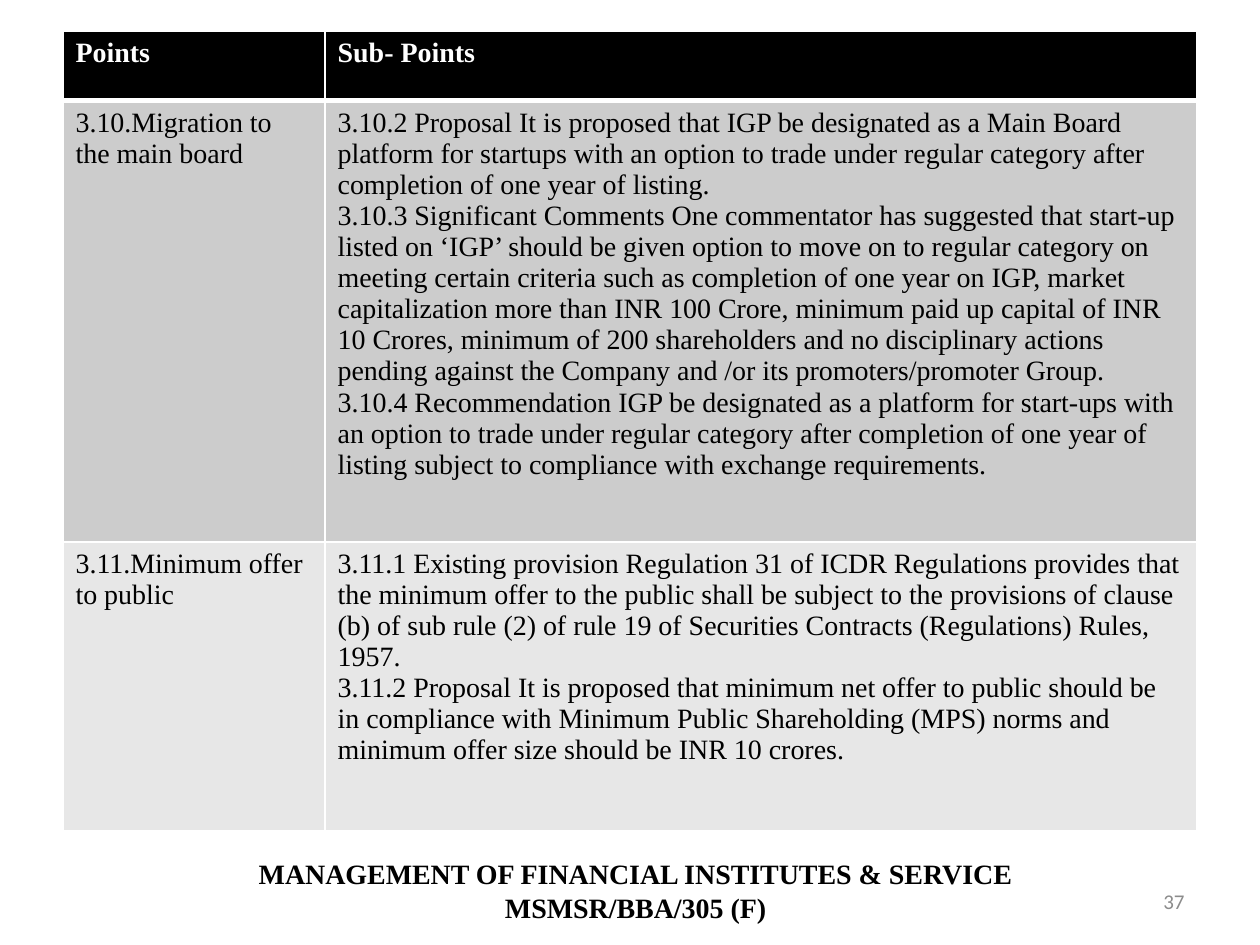
from lxml.etree import SubElement
from pptx import Presentation
from pptx.dml.color import RGBColor
from pptx.enum.text import MSO_ANCHOR, PP_ALIGN
from pptx.oxml.ns import qn
from pptx.util import Inches, Pt

COLORS = {
    "header": "000000",
    "band_dark": "CCCCCC",
    "band_light": "E7E7E7",
    "ink": "000000",
    "white": "FFFFFF",
    "page_number": "8C8C8C",
}
SERIF = "Times New Roman"
HEADER_FONT = {"name": SERIF, "size": Pt(16), "bold": True}
BODY_FONT = {**HEADER_FONT, "bold": False}
NUMBER_FONT = {"name": "Calibri", "size": Pt(12), "bold": False}

COLUMN_WIDTHS = [2.08, 6.92]
ROW_HEIGHTS = [0.55, 3.5, 2.29]
ROW_FILLS = ["header", "band_dark", "band_light"]
# Each cell is a list of paragraphs
ROWS = [
    [["Points"], ["Sub- Points"]],
    [
        ["3.10.Migration to the main board"],
        [
            "3.10.2 Proposal It is proposed that IGP be designated as a Main Board "
            "platform for startups with an option to trade under regular category "
            "after completion of one year of listing.",
            "3.10.3 Significant Comments One commentator has suggested that start-up "
            "listed on ‘IGP’ should be given option to move on to regular category on "
            "meeting certain criteria such as completion of one year on IGP, market "
            "capitalization more than INR 100 Crore, minimum paid up capital of INR "
            "10 Crores, minimum of 200 shareholders and no disciplinary actions "
            "pending against the Company and /or its promoters/promoter Group.",
            "3.10.4 Recommendation IGP be designated as a platform for start-ups with "
            "an option to trade under regular category after completion of one year of "
            "listing subject to compliance with exchange requirements.",
        ],
    ],
    [
        ["3.11.Minimum offer to public"],
        [
            "3.11.1 Existing provision Regulation 31 of ICDR Regulations provides that "
            "the minimum offer to the public shall be subject to the provisions of "
            "clause (b) of sub rule (2) of rule 19 of Securities Contracts "
            "(Regulations) Rules, 1957.",
            "3.11.2 Proposal It is proposed that minimum net offer to public should be "
            "in compliance with Minimum Public Shareholding (MPS) norms and minimum "
            "offer size should be INR 10 crores.",
        ],
    ],
]


def write_text(frame, paragraphs, font_values, color, align=PP_ALIGN.LEFT):
    frame.word_wrap = True
    frame.text = "\n".join(paragraphs)
    for paragraph in frame.paragraphs:
        paragraph.alignment = align
        for run in paragraph.runs:
            for attribute, value in font_values.items():
                setattr(run.font, attribute, value)
            run.font.color.rgb = RGBColor.from_string(COLORS[color])


def set_borders(cell, widths):
    """Draw white borders; widths maps a side (L, R, T, B) to points."""
    properties = cell._tc.get_or_add_tcPr()
    for side, width in widths.items():
        line = SubElement(properties, qn(f"a:ln{side}"), w=str(Pt(width)))
        fill = SubElement(line, qn("a:solidFill"))
        SubElement(fill, qn("a:srgbClr"), val=COLORS["white"])


def add_points_table(slide, left, top, width, height):
    table = slide.shapes.add_table(
        len(ROWS), len(COLUMN_WIDTHS),
        Inches(left), Inches(top), Inches(width), Inches(height)).table
    for column, column_width in zip(table.columns, COLUMN_WIDTHS):
        column.width = Inches(column_width)
    for r, (row, fill) in enumerate(zip(ROWS, ROW_FILLS)):
        table.rows[r].height = Inches(ROW_HEIGHTS[r])
        is_header = r == 0
        for c, paragraphs in enumerate(row):
            cell = table.cell(r, c)
            # A thick rule separates the header from the body
            set_borders(cell, {"L": 1, "R": 1, "T": 3 if r == 1 else 1,
                               "B": 3 if is_header else 1})
            cell.fill.solid()
            cell.fill.fore_color.rgb = RGBColor.from_string(COLORS[fill])
            write_text(cell.text_frame, paragraphs,
                       HEADER_FONT if is_header else BODY_FONT,
                       "white" if is_header else "ink")


def add_label(slide, box, text, font_values, color, align, anchor):
    frame = slide.shapes.add_textbox(*map(Inches, box)).text_frame
    frame.vertical_anchor = anchor
    write_text(frame, [text], font_values, color, align)


def main():
    prs = Presentation()
    prs.slide_width, prs.slide_height = Inches(10), Inches(7.5)
    slide = prs.slides.add_slide(prs.slide_layouts[6])

    # Points and sub-points
    add_points_table(slide, 0.5, 0.25, 9, sum(ROW_HEIGHTS))

    # Course footer and page number
    add_label(slide, (0.84, 6.75, 8.41, 0.64),
              "MANAGEMENT OF FINANCIAL INSTITUTES & SERVICE\vMSMSR/BBA/305 (F)",
              HEADER_FONT, "ink", PP_ALIGN.CENTER, MSO_ANCHOR.TOP)
    add_label(slide, (7.17, 6.95, 2.33, 0.4), "37",
              NUMBER_FONT, "page_number", PP_ALIGN.RIGHT, MSO_ANCHOR.MIDDLE)

    prs.save("out.pptx")


if __name__ == "__main__":
    main()
